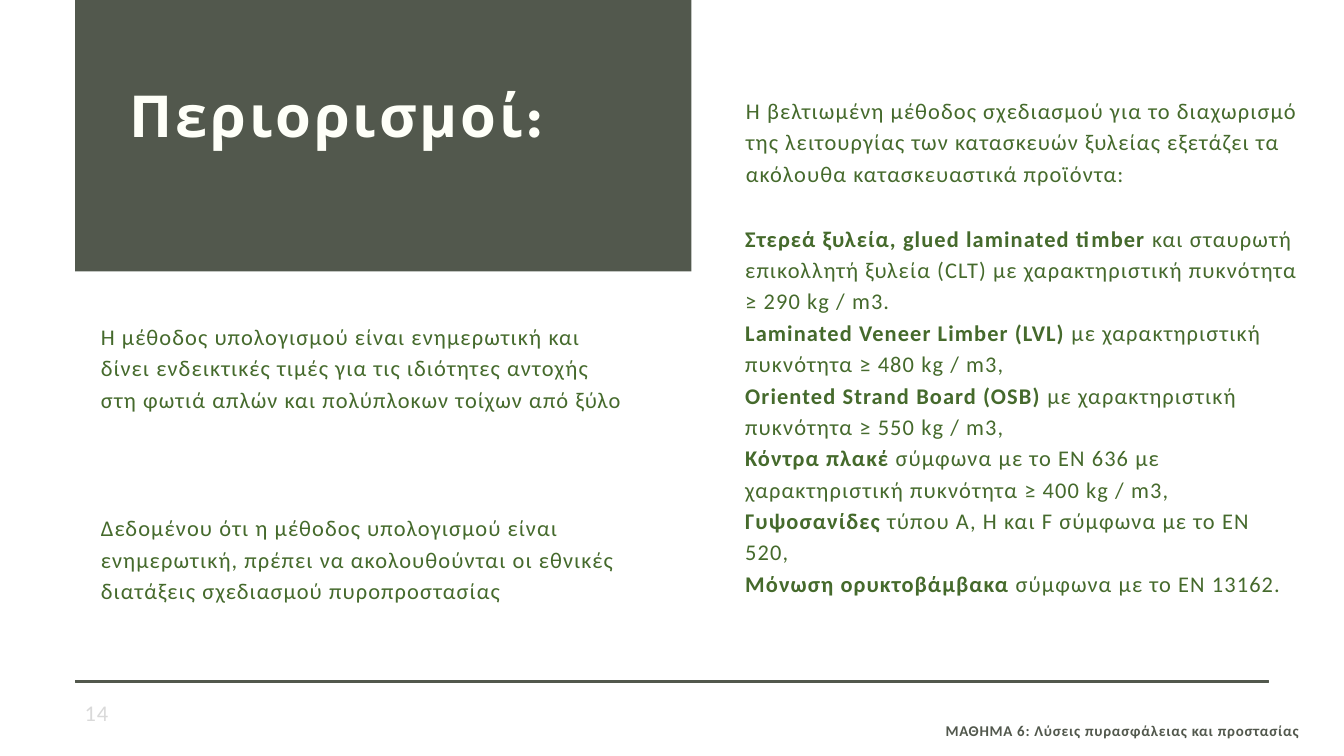
from pptx import Presentation
from pptx.dml.color import RGBColor
from pptx.enum.shapes import MSO_SHAPE
from pptx.enum.text import MSO_ANCHOR, PP_ALIGN
from pptx.util import Inches, Pt

DARK = "52584D"
GREEN = "456A2C"
PALE_GRAY = "D9D9D9"
IVORY = "FEFFF8"

BODY = {"name": "Calibri", "size": Pt(24), "bold": False}
TITLE = {"name": "League Spartan", "size": Pt(62), "bold": True}
FOOTER = {"name": "Calibri", "size": Pt(16), "bold": True}

INTRO = (
    "Η βελτιωμένη μέθοδος σχεδιασμού για το διαχωρισμό της λειτουργίας "
    "των κατασκευών ξυλείας εξετάζει τα ακόλουθα κατασκευαστικά προϊόντα:"
)
PRODUCTS = [
    ("Στερεά ξυλεία, glued laminated timber ",
     "και σταυρωτή επικολλητή ξυλεία (CLT) με χαρακτηριστική πυκνότητα ≥ 290 kg / m3."),
    ("Laminated Veneer Limber (LVL) ", "με χαρακτηριστική πυκνότητα ≥ 480 kg / m3,"),
    ("Oriented Strand Board (OSB) ", "με χαρακτηριστική πυκνότητα ≥ 550 kg / m3,"),
    ("Κόντρα πλακέ ",
     "σύμφωνα με το EN 636 με χαρακτηριστική πυκνότητα ≥ 400 kg / m3,"),
    ("Γυψοσανίδες ", "τύπου A, H και F σύμφωνα με το EN 520,"),
    ("Μόνωση ορυκτοβάμβακα ", "σύμφωνα με το EN 13162."),
]
METHOD_NOTE = (
    "Η μέθοδος υπολογισμού είναι ενημερωτική και δίνει ενδεικτικές τιμές "
    "για τις ιδιότητες αντοχής στη φωτιά απλών και πολύπλοκων τοίχων από ξύλο"
)
NATIONAL_NOTE = (
    "Δεδομένου ότι η μέθοδος υπολογισμού είναι ενημερωτική, πρέπει να "
    "ακολουθούνται οι εθνικές διατάξεις σχεδιασμού πυροπροστασίας"
)


def color(hex_value):
    return RGBColor.from_string(hex_value)


def set_values(target, values):
    for name, value in values.items():
        setattr(target, name, value)


def add_run(paragraph, text, font, hex_value, tracking):
    run = paragraph.add_run()
    run.text = text
    set_values(run.font, font)
    run.font.color.rgb = color(hex_value)
    run.font._element.set("spc", str(round(tracking * 100)))


def add_bar(slide, left, top, width, height, outlined=False):
    shape = slide.shapes.add_shape(
        MSO_SHAPE.RECTANGLE, Inches(left), Inches(top), Inches(width), Inches(height))
    shape.shadow.inherit = False
    shape.fill.solid()
    shape.fill.fore_color.rgb = color(DARK)
    if outlined:
        shape.line.color.rgb = color(DARK)
        shape.line.width = Pt(0.75)
    else:
        shape.line.fill.background()
    return shape


def add_box(slide, left, top, width, height):
    return slide.shapes.add_textbox(
        Inches(left), Inches(top), Inches(width), Inches(height))


def write(shape, paragraphs, font=BODY, hex_value=GREEN, tracking=1.2,
          spacing=Pt(33.6), align=PP_ALIGN.LEFT, anchor=MSO_ANCHOR.TOP,
          margins=(0, 0)):
    horizontal, vertical = (Inches(margin) for margin in margins)
    frame = shape.text_frame
    set_values(frame, {
        "word_wrap": True, "vertical_anchor": anchor,
        "margin_left": horizontal, "margin_right": horizontal,
        "margin_top": vertical, "margin_bottom": vertical,
    })
    for index, runs in enumerate(paragraphs):
        paragraph = frame.add_paragraph() if index else frame.paragraphs[0]
        set_values(paragraph, {"alignment": align, "line_spacing": spacing})
        for text, bold in runs:
            add_run(paragraph, text, {**font, "bold": bold}, hex_value, tracking)


def write_plain(shape, text, font=BODY, **options):
    write(shape, [[(text, font["bold"])]], font, **options)


def main():
    presentation = Presentation()
    presentation.slide_width = Inches(20)
    presentation.slide_height = Inches(11.25)
    slide = presentation.slides.add_slide(presentation.slide_layouts[6])

    write_plain(add_box(slide, 11.1, 1.38, 8.24, 2.09), INTRO)
    write(add_box(slide, 11.09, 3.28, 8.24, 5.72),
          [[(product, True), (condition, False)] for product, condition in PRODUCTS])

    add_bar(slide, 1.12, 0, 9.17, 4.04)
    write_plain(add_bar(slide, 1.93, 1.05, 7.56, 1.18), "Περιορισμοί:", TITLE,
                hex_value=IVORY, tracking=3.1, spacing=Pt(83.7))
    add_bar(slide, 1.12, 10.12, 17.75, 0.04, outlined=True)

    write_plain(add_box(slide, 1.5, 4.74, 7.78, 1.87), METHOD_NOTE)
    write_plain(add_box(slide, 1.16, 10.41, 2.33, 0.4), "14", hex_value=PALE_GRAY,
                spacing=None, anchor=MSO_ANCHOR.MIDDLE, margins=(0.1, 0.05))
    write_plain(add_box(slide, 1.5, 7.59, 7.78, 1.4), NATIONAL_NOTE)
    write_plain(add_box(slide, 11.33, 10.7, 8.01, 0.29),
                "ΜΑΘΗΜΑ 6: Λύσεις πυρασφάλειας και προστασίας", FOOTER,
                hex_value=DARK, tracking=0.8, spacing=Pt(22.4), align=PP_ALIGN.RIGHT)

    presentation.save("out.pptx")


if __name__ == "__main__":
    main()
